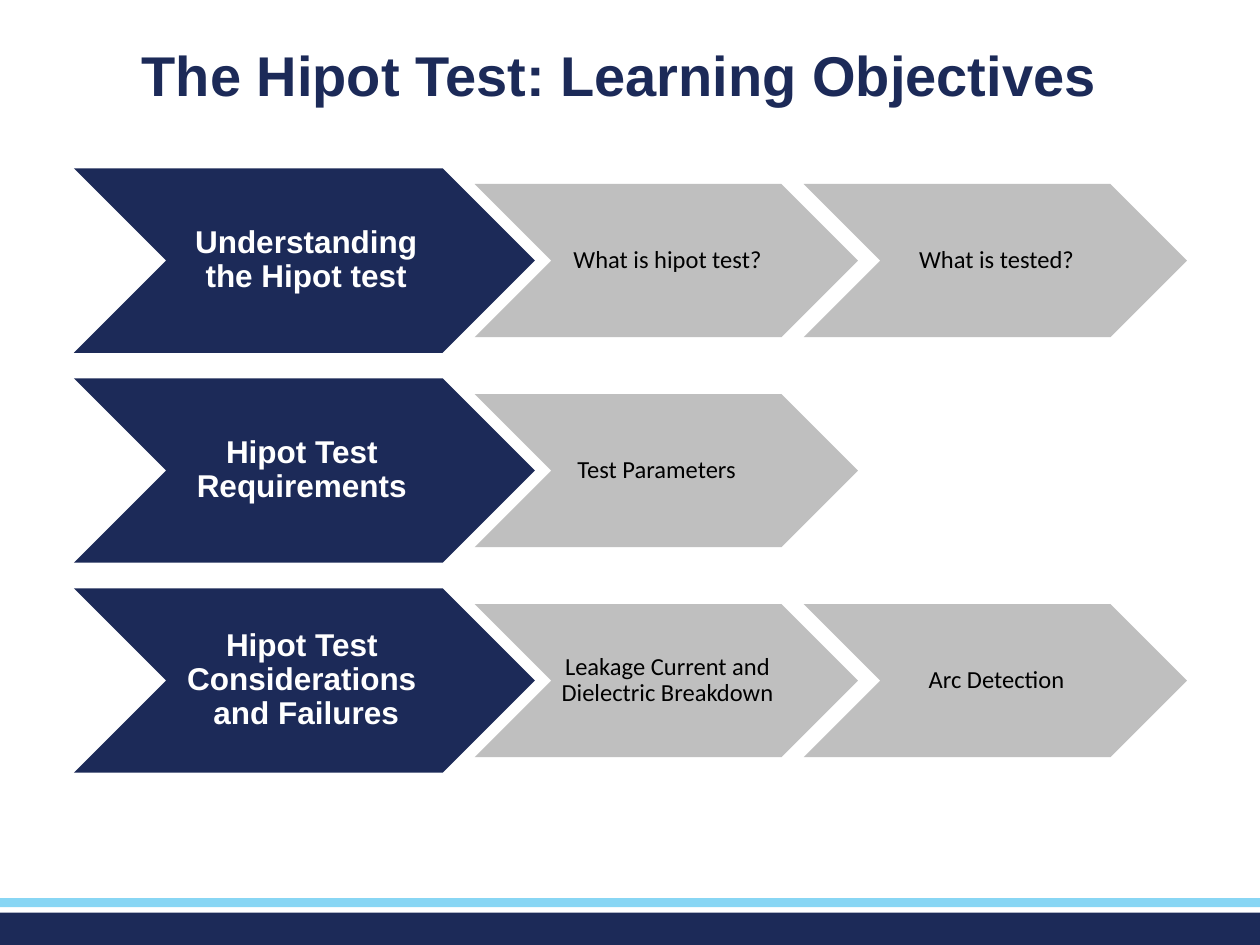
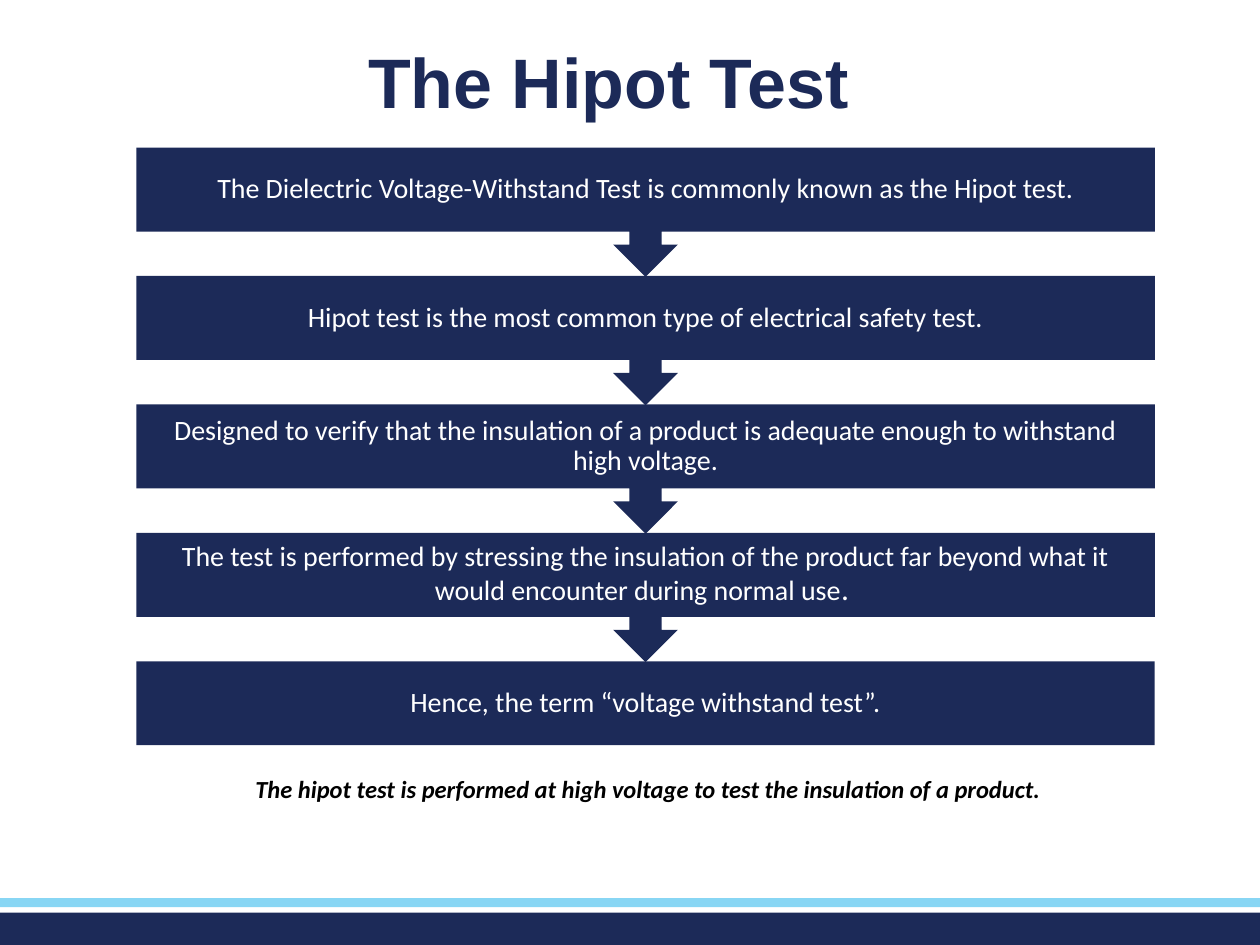
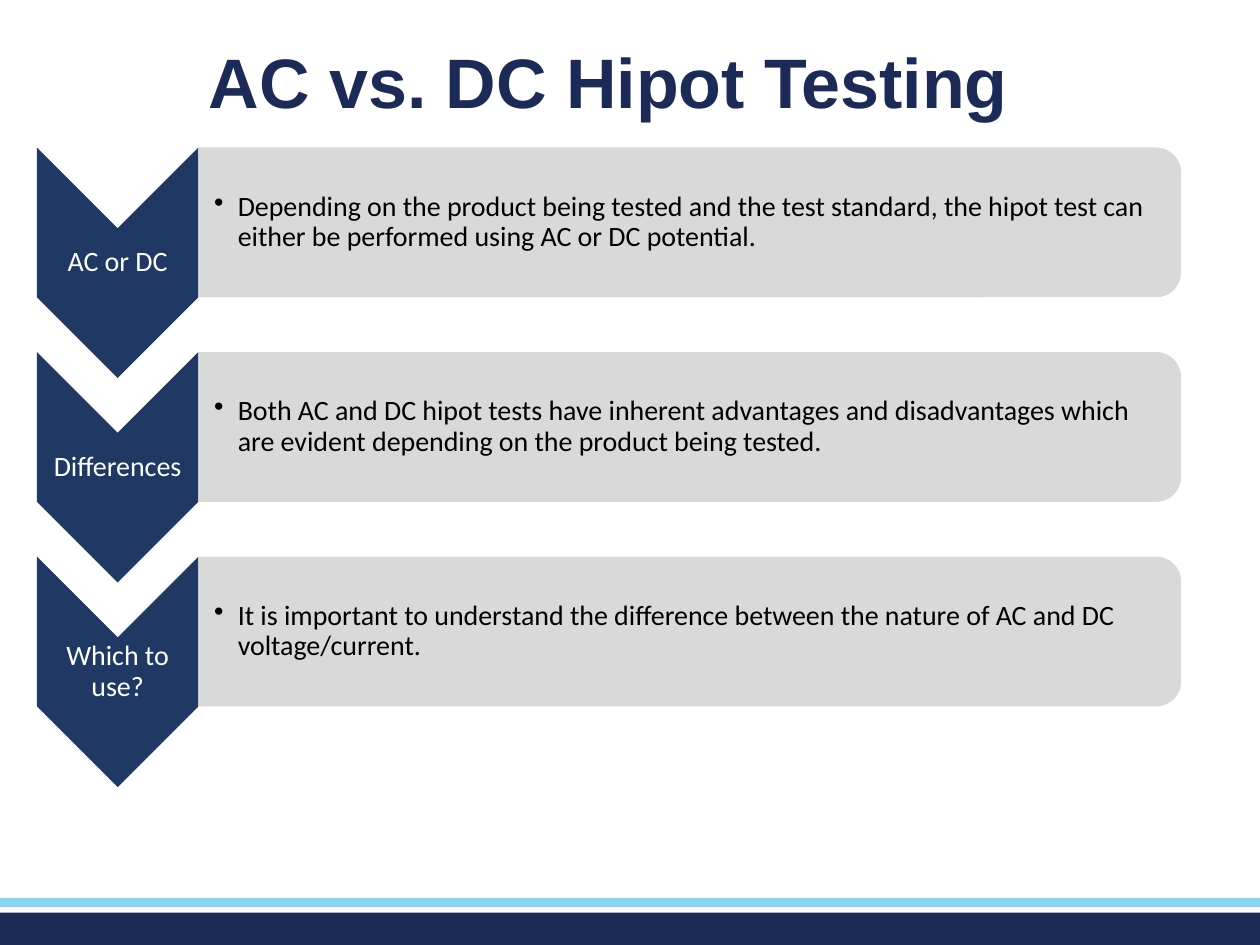
from lxml import etree
from pptx import Presentation
from pptx import util as u
from pptx.dml.color import RGBColor
from pptx.enum import shapes, text
from pptx.oxml import ns

Pt = u.Pt
PRESET = shapes.MSO_SHAPE
ALIGN = text.PP_ALIGN
ANCHOR = text.MSO_ANCHOR

COLORS = {
    "navy": "1C2A58",
    "sky": "88D6F4",
    "steel": "203864",
    "silver": "BFBFBF",
    "mist": "D9D9D9",
    "white": "FFFFFF",
    "black": "000000",
}
SLIDE_WIDTH, SLIDE_HEIGHT = 720, 540
DEFAULT_INSETS = (7.2, 3.6, 7.2, 3.6)
INDENT = 13.5

TITLE = {"name": "Arial", "bold": True, "color": "navy"}
LEAD = {"name": "Arial", "size": 18, "bold": True, "color": "white"}
TOPIC = {"name": "Calibri", "size": 14, "color": "black"}
STEP = {"name": "Calibri", "size": 16, "color": "white"}
DETAIL = {"name": "Calibri", "size": 16, "color": "black"}
NOTE = {"name": "Calibri", "size": 14, "bold": True, "italic": True, "color": "black"}


def rgb(name):
    return RGBColor.from_string(COLORS[name])


def format_span(span, style):
    for key, value in style.items():
        if key == "color":
            span.font.color.rgb = rgb(value)
        else:
            setattr(span.font, key, Pt(value) if key == "size" else value)


def write(shape, words, style, insets=DEFAULT_INSETS, anchor=ANCHOR.MIDDLE,
          align=ALIGN.CENTER, spacing=0.9):
    """Fill a shape with one paragraph; words is a string or (string, size) pairs."""
    frame = shape.text_frame
    left, top, right, bottom = map(Pt, insets)
    settings = {"word_wrap": True, "auto_size": text.MSO_AUTO_SIZE.NONE,
                "vertical_anchor": anchor, "margin_left": left, "margin_top": top,
                "margin_right": right, "margin_bottom": bottom}
    for key, value in settings.items():
        setattr(frame, key, value)
    para = frame.paragraphs[0]
    para.alignment = align
    para.line_spacing = spacing
    parts = [(words, style["size"])] if isinstance(words, str) else words
    for part, size in parts:
        for number, line in enumerate(part.split("\n")):
            if number:
                para.add_line_break()
            span = para.add_run()
            span.text = line
            format_span(span, {**style, "size": size})
    return para


def indent(para, first_line, bullet=None):
    properties = para._p.get_or_add_pPr()
    properties.set("marL", str(Pt(INDENT)))
    properties.set("indent", str(Pt(first_line)))
    if bullet:
        etree.SubElement(properties, ns.qn("a:buChar")).set("char", bullet)


def add_block(page, preset, box, color):
    block = page.shapes.add_shape(preset, *map(Pt, box))
    block.shadow.inherit = False
    block.fill.solid()
    block.fill.fore_color.rgb = rgb(color)
    block.line.fill.background()
    return block


def add_turned_block(page, preset, box, color):
    """Add a shape turned by 90 degrees so that it covers the box as seen."""
    left, top, width, height = box
    shift = (width - height) / 2
    block = add_block(page, preset, (left + shift, top - shift, height, width), color)
    block.rotation = 90


def add_label(page, box, words, style, **options):
    label = page.shapes.add_textbox(*map(Pt, box))
    return write(label, words, style, **options)


def add_page(deck, title, size, left):
    page = deck.slides.add_slide(deck.slide_layouts[5])
    add_block(page, PRESET.RECTANGLE, (0, 521.5, SLIDE_WIDTH, 18.5), "navy")
    add_block(page, PRESET.RECTANGLE, (0, 513.2, SLIDE_WIDTH, 5.2), "sky")
    heading = page.shapes.title
    box = {"left": left, "top": 23.7, "width": 648, "height": 47.5}
    for key, value in box.items():
        setattr(heading, key, Pt(value))
    write(heading, title, {**TITLE, "size": size}, anchor=ANCHOR.TOP)
    return page


def add_objective_row(page, left, top, lead, topics):
    height, topic_height = 105.4, 87.5
    chevron = add_block(page, PRESET.CHEVRON, (left, top, 263.4, height), "navy")
    write(chevron, lead, LEAD, insets=(2, 1, 0, 1))
    topic_top = top + (height - topic_height) / 2
    for column, (topic, centered) in enumerate(topics):
        box = (left + 229 + column * 188, topic_top, 219, topic_height)
        chevron = add_block(page, PRESET.CHEVRON, box, "silver")
        para = write(chevron, topic, TOPIC, insets=(1.4, 1, 0, 1),
                     align=ALIGN.CENTER if centered else ALIGN.LEFT)
        if not centered:
            indent(para, 0)


def add_step_chain(page, left, top, width, steps):
    pitch, callout_height, last_height = 73.4, 73.9, 48
    for row, words in enumerate(steps):
        last = row == len(steps) - 1
        preset = PRESET.RECTANGLE if last else PRESET.DOWN_ARROW_CALLOUT
        height = last_height if last else callout_height
        block = add_block(page, preset, (left, top + row * pitch, width, height), "navy")
        write(block, words, STEP, insets=(9, 9, 9, 9))


def add_detail_row(page, left, top, label, detail):
    arrow_width, panel_width, panel_height = 92.3, 561.5, 85.6
    panel_left = left + arrow_width
    add_turned_block(page, PRESET.CHEVRON, (left, top, arrow_width, 131.7), "steel")
    add_label(page, (left, top + 46, arrow_width, 39.6), label, STEP, insets=(0.8,) * 4)
    add_turned_block(page, PRESET.ROUND_2_SAME_RECTANGLE,
                     (panel_left, top, panel_width, panel_height), "mist")
    para = add_label(page, (panel_left, top + 4.2, panel_width - 4.2, panel_height - 8.4),
                     detail, DETAIL, insets=(9, 0.8, 0.8, 0.8), align=ALIGN.LEFT)
    indent(para, -INDENT, "•")


def build_objectives(deck):
    page = add_page(deck, "The Hipot Test: Learning Objectives", 32, 30)
    rows = [
        ("Understanding the Hipot test",
         [("What is hipot test?", True), ("What is tested?", True)]),
        ("Hipot Test \nRequirements ", [("Test Parameters", False)]),
        ("Hipot Test \nConsiderations \nand Failures",
         [("Leakage Current and Dielectric Breakdown", True), ("Arc Detection", True)]),
    ]
    for row, (lead, topics) in enumerate(rows):
        add_objective_row(page, 42.3, 96.2 + row * 120, lead, topics)


def build_hipot_test(deck):
    page = add_page(deck, "The Hipot Test", 40, 23.7)
    add_step_chain(page, 77.9, 84.3, 582, [
        "The Dielectric Voltage-Withstand Test is commonly known as the Hipot test.",
        "Hipot test is the most common type of electrical safety test.",
        "Designed to verify that the insulation of a product is adequate enough "
        "to withstand high voltage.",
        [("The test is performed by stressing the insulation of the product far beyond "
          "what it would encounter during normal use", 16), (". ", 18)],
        "Hence, the term “voltage withstand test”.",
    ])
    add_label(page, (84.2, 438.5, 576, 24.5),
              "The hipot test is performed at high voltage to test the insulation "
              "of a product. ", NOTE, anchor=ANCHOR.TOP, spacing=1.0)


def build_ac_dc(deck):
    page = add_page(deck, "AC vs. DC Hipot Testing", 40, 23.7)
    rows = [
        ("AC or DC",
         "Depending on the product being tested and the test standard, the hipot test "
         "can either be performed using AC or DC potential."),
        ("Differences",
         "Both AC and DC hipot tests have inherent advantages and disadvantages which "
         "are evident depending on the product being tested."),
        ("Which to use?",
         "It is important to understand the difference between the nature of AC and DC "
         "voltage/current."),
    ]
    for row, (label, detail) in enumerate(rows):
        add_detail_row(page, 21.1, 84.3 + row * 116.9, label, detail)


def main():
    deck = Presentation()
    deck.slide_width, deck.slide_height = Pt(SLIDE_WIDTH), Pt(SLIDE_HEIGHT)
    for build in (build_objectives, build_hipot_test, build_ac_dc):
        build(deck)
    deck.save("out.pptx")


if __name__ == "__main__":
    main()
